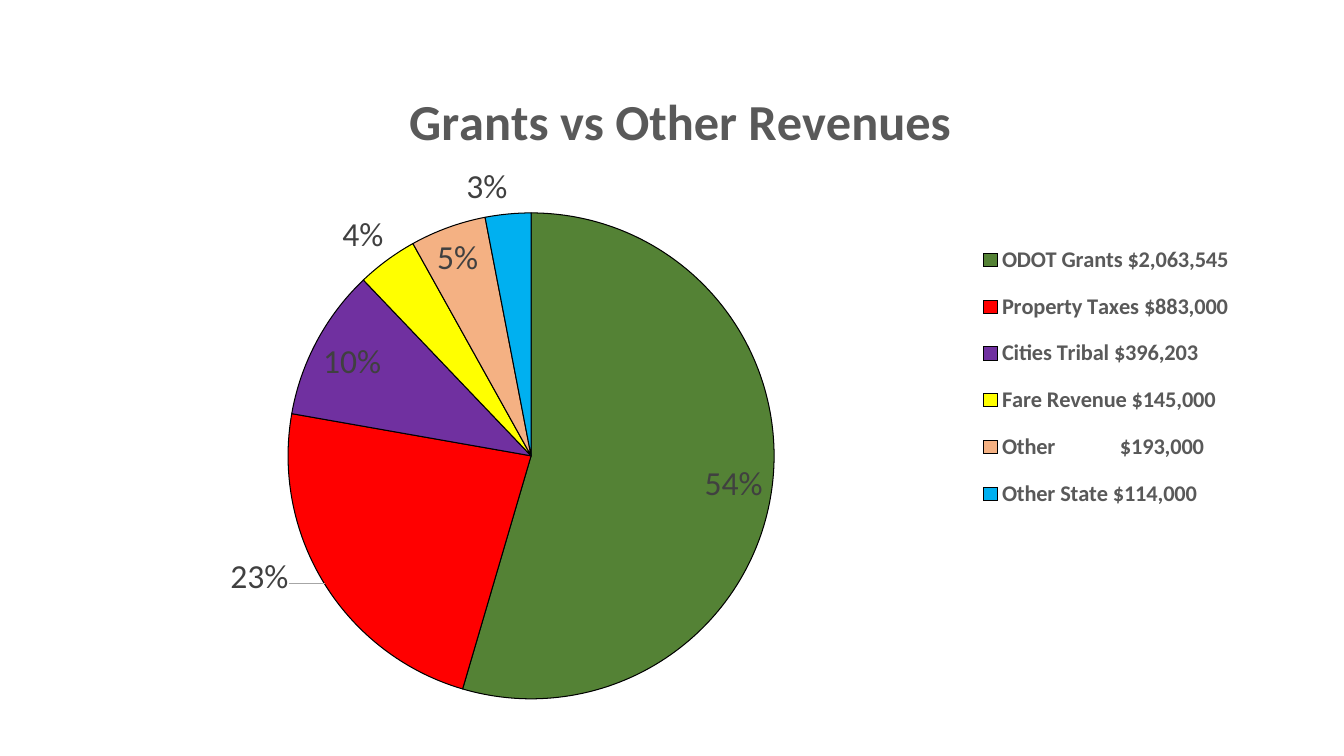
from lxml import etree
from pptx import Presentation, util as u
from pptx.chart.data import CategoryChartData
from pptx.dml.color import RGBColor
from pptx.enum import chart as ch
from pptx.oxml import parse_xml
from pptx.oxml.ns import nsdecls, qn

PX = 9071  # EMU in one px, 100.8 px to the inch
FONT = "Calibri"
COLORS = {
    "text": "595959", "label": "404040", "edge": "000000", "lead": "A6A6A6",
    "odot": "548235", "tax": "FF0000", "city": "7030A0",
    "fare": "FFFF00", "other": "F4B183", "state": "00B0F0",
}
# Legend text, share, color; the "Other" amount is set off to column 18
ROWS = [
    ("ODOT Grants $2,063,545", 0.54, "odot"),
    ("Property Taxes $883,000", 0.23, "tax"),
    ("Cities Tribal $396,203", 0.10, "city"),
    ("Fare Revenue $145,000", 0.04, "fare"),
    ("Other".ljust(18) + "$193,000", 0.05, "other"),
    ("Other State $114,000", 0.03, "state"),
]


def rgb(name):
    return RGBColor.from_string(COLORS[name])


def style(font, size, color, bold=False):
    font.name, font.size, font.bold = FONT, u.Pt(size), bold
    font.color.rgb = rgb(color)


def place(node, index, mode="edge", target=None, **parts):
    """Give a chart part a manual layout in fractions of the chart."""
    for old in node.findall(qn("c:layout")):
        node.remove(old)
    layout = parse_xml(f"<c:layout {nsdecls('c')}/>")
    manual = etree.SubElement(layout, qn("c:manualLayout"))
    items = [("layoutTarget", target)] if target else []
    if mode == "edge":
        items += [("xMode", mode), ("yMode", mode)]
    items += [(key, f"{val:.4f}") for key, val in parts.items()]
    for key, val in items:
        etree.SubElement(manual, qn(f"c:{key}")).set("val", val)
    node.insert(index, layout)


def add_labels(series, width, height):
    labels = series.data_labels
    labels.show_value = True
    labels.number_format, labels.number_format_is_linked = "0%", False
    labels.position = ch.XL_LABEL_POSITION.BEST_FIT
    style(labels.font, 24, "label")

    # The tax label stands off the pie on a leader line
    tax = series.points[1].data_label
    tax.position = ch.XL_LABEL_POSITION.BEST_FIT
    style(tax.font, 24, "label")
    root = series.points[1].data_label.font and series.data_labels
    return root, -31 / width, -30 / height


def add_pie(slide, left, top, width, height):
    data = CategoryChartData(number_format="0%")
    data.categories = [row[0] for row in ROWS]
    data.add_series("Series 1", [row[1] for row in ROWS])
    box = [val * PX for val in (left, top, width, height)]
    chart = slide.shapes.add_chart(ch.XL_CHART_TYPE.PIE, *box, data).chart
    style(chart.font, 10, "edge")
    tree = chart.element

    # Title
    para = chart.chart_title.text_frame.paragraphs[0]
    para.text = "Grants vs Other Revenues"
    style(para.font, 36, "text", True)
    place(tree.find(".//" + qn("c:title")), 1,
          x=309 / width, y=35 / height)

    # Slices
    plot = chart.plots[0]
    plot.vary_by_categories = True
    series = plot.series[0]
    for i, (_, _, color) in enumerate(ROWS):
        form = series.points[i].format
        form.fill.solid()
        form.fill.fore_color.rgb = rgb(color)
        form.line.color.rgb = rgb("edge")
        form.line.width = u.Pt(0.75)
    place(tree.find(".//" + qn("c:plotArea")), 0, target="inner",
          x=197 / width, y=171 / height, w=486 / width, h=486 / height)

    # Labels, with the tax label moved out
    _, dx, dy = add_labels(series, width, height)
    group = tree.find(".//" + qn("c:ser")).find(qn("c:dLbls"))
    tax = group.find(qn("c:dLbl"))
    place(tax, 1, mode="factor", x=dx, y=dy)
    tax.insert(2, parse_xml(
        f'<c:numFmt {nsdecls("c")} formatCode="0%" sourceLinked="0"/>'))
    lead = group.find(qn("c:showLeaderLines"))
    if lead is None:
        lead = etree.SubElement(group, qn("c:showLeaderLines"))
    lead.set("val", "1")
    lead.addnext(parse_xml(
        f'<c:leaderLines {nsdecls("c", "a")}><c:spPr><a:ln w="9525">'
        f'<a:solidFill><a:srgbClr val="{COLORS["lead"]}"/></a:solidFill>'
        '</a:ln></c:spPr></c:leaderLines>'))

    # Legend
    chart.has_legend = True
    legend = chart.legend
    legend.position = ch.XL_LEGEND_POSITION.RIGHT
    legend.include_in_layout = False
    style(legend.font, 16, "text", True)
    node = tree.find(".//" + qn("c:legend"))
    after = 0 if node.find(qn("c:legendPos")) is None else 1
    place(node, after, x=879 / width, y=185 / height,
          w=272 / width, h=300 / height)


def main():
    deck = Presentation()
    deck.slide_width, deck.slide_height = u.Inches(13.33), u.Inches(7.5)
    slide = deck.slides.add_slide(deck.slide_layouts[6])
    add_pie(slide, 91, 42, 1163, 671)
    deck.save("out.pptx")


if __name__ == "__main__":
    main()
